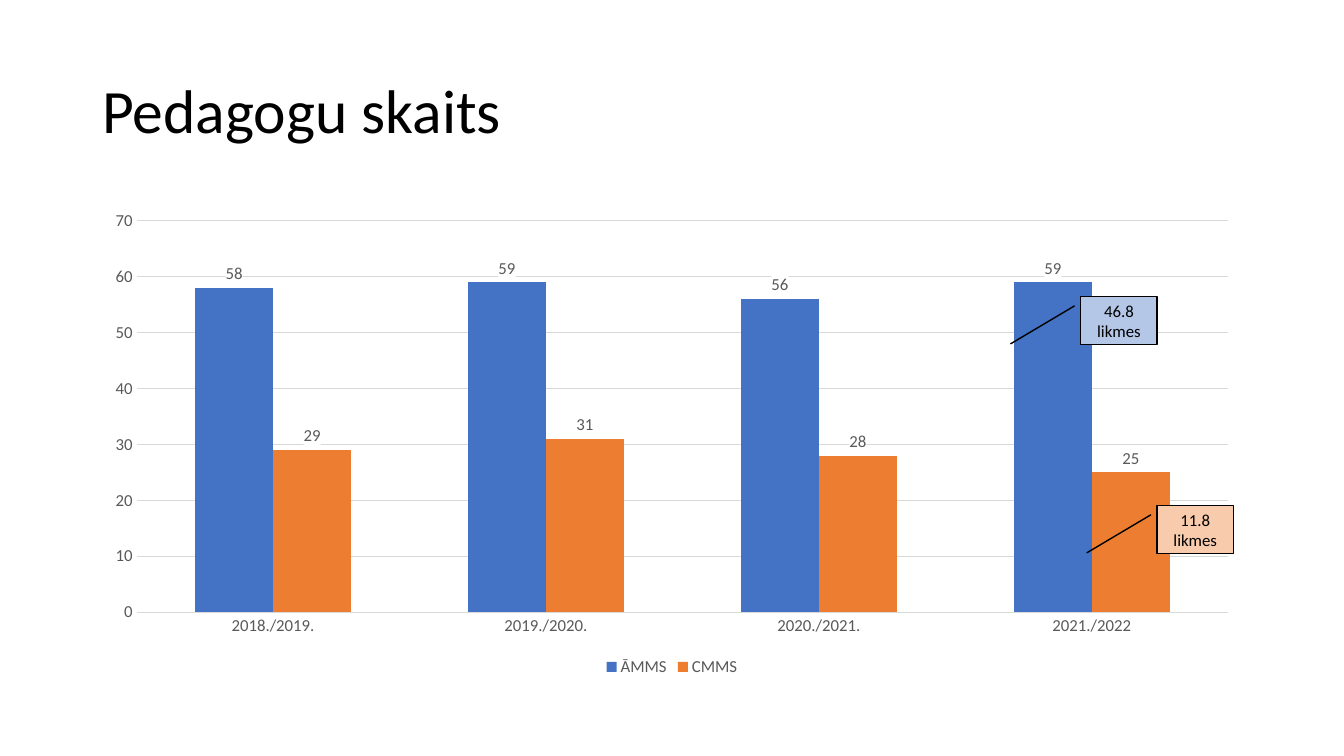
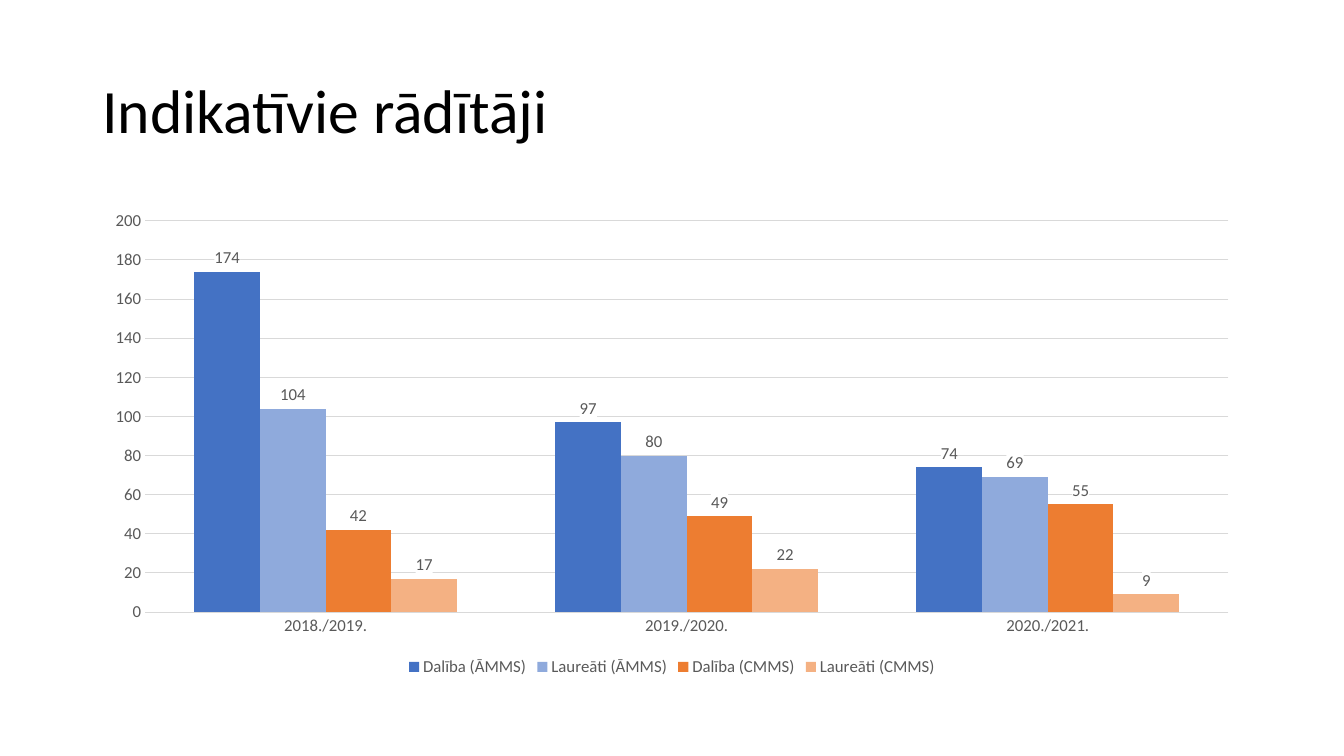
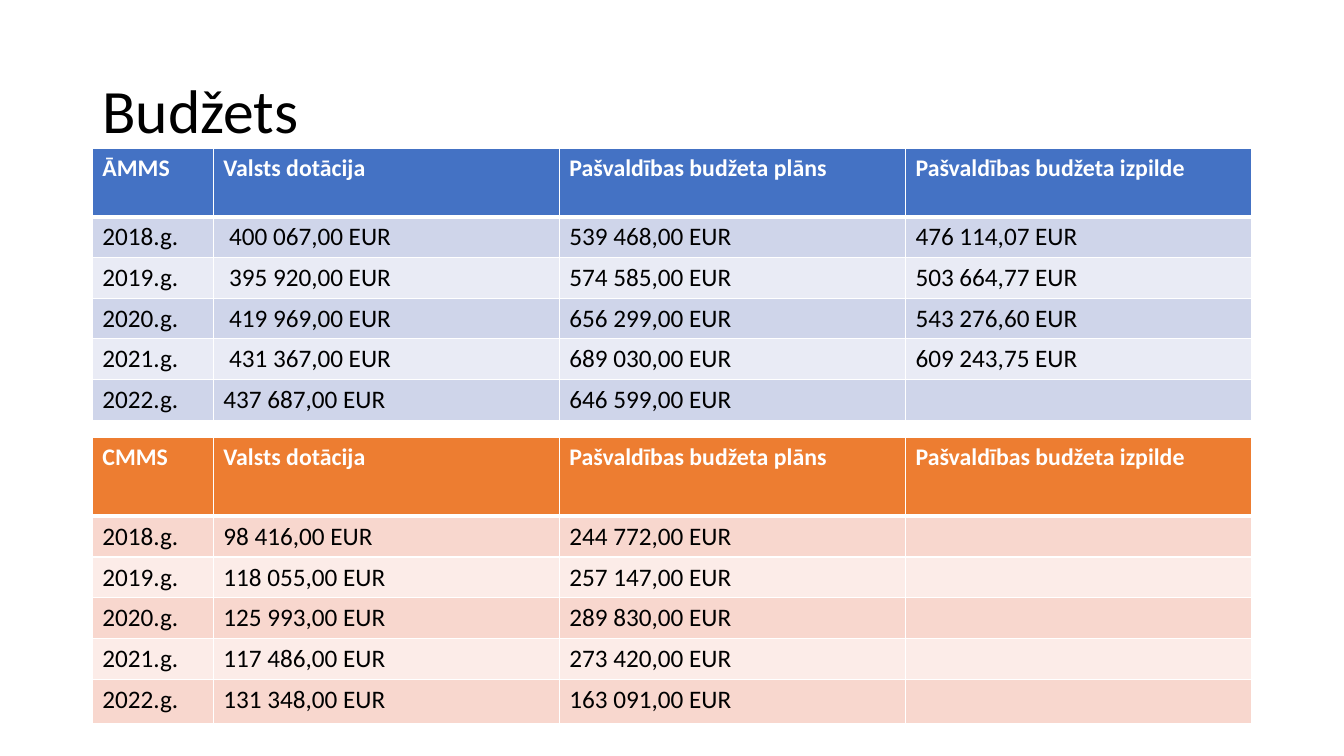
import pptx
import pptx.chart.data
import pptx.dml.color
import pptx.enum.chart
import pptx.enum.shapes
import pptx.enum.text
import pptx.oxml
import pptx.oxml.ns
import pptx.util

Pt = pptx.util.Pt
RGB = pptx.dml.color.RGBColor
ALIGN = pptx.enum.text.PP_ALIGN
ANCHOR = pptx.enum.text.MSO_ANCHOR

# Shared style
FONT = "Calibri"
BLACK = RGB(0x00, 0x00, 0x00)
WHITE = RGB(0xFF, 0xFF, 0xFF)
GREY = RGB(0x59, 0x59, 0x59)
GRID = RGB(0xD9, 0xD9, 0xD9)
BLUE = RGB(0x44, 0x72, 0xC4)
BLUE_MID = RGB(0x8F, 0xAA, 0xDC)
BLUE_PALE = RGB(0xB4, 0xC7, 0xE7)
BLUE_BANDS = (RGB(0xCF, 0xD5, 0xEA), RGB(0xE9, 0xEB, 0xF5))
ORANGE = RGB(0xED, 0x7D, 0x31)
ORANGE_MID = RGB(0xF4, 0xB1, 0x83)
ORANGE_PALE = RGB(0xF8, 0xCB, 0xAD)
ORANGE_BANDS = (RGB(0xF8, 0xD7, 0xCE), RGB(0xFC, 0xEC, 0xE8))
LEFT, WIDTH = 66, 828
CHART_TOP, CHART_HEIGHT = 143.75, 342.6

# Content
YEARS = ["2018./2019.", "2019./2020.", "2020./2021."]
TEACHERS = {
    "categories": YEARS + ["2021./2022"],
    "series": [("ĀMMS", (58, 59, 56, 59), BLUE),
               ("CMMS", (29, 31, 28, 25), ORANGE)],
    "top": 70, "step": 10,
}
CALLOUTS = [  # text, left, top, fill
    ("46.8 likmes", 772, 212, BLUE_PALE),
    ("11.8 likmes", 826.5, 361.25, ORANGE_PALE),
]
INDICATORS = {
    "categories": YEARS,
    "series": [("Dalība (ĀMMS)", (174, 97, 74), BLUE),
               ("Laureāti (ĀMMS)", (104, 80, 69), BLUE_MID),
               ("Dalība (CMMS)", (42, 49, 55), ORANGE),
               ("Laureāti (CMMS)", (17, 22, 9), ORANGE_MID)],
    "top": 200, "step": 20,
}
BUDGET_HEADS = ["Valsts dotācija", "Pašvaldības budžeta plāns",
                "Pašvaldības budžeta izpilde"]
BUDGET_COLS = (86.4, 247.2, 247.2, 247.2)
BUDGETS = [
    {"school": "ĀMMS", "top": 106.2, "head": BLUE, "bands": BLUE_BANDS,
     "heights": [48.6] + [29.1] * 5,
     "rows": [("2018.g.", " 400 067,00 EUR", "539 468,00 EUR", "476 114,07 EUR"),
              ("2019.g.", " 395 920,00 EUR", "574 585,00 EUR", "503 664,77 EUR"),
              ("2020.g.", " 419 969,00 EUR", "656 299,00 EUR", "543 276,60 EUR"),
              ("2021.g.", " 431 367,00 EUR", "689 030,00 EUR", "609 243,75 EUR"),
              ("2022.g.", "437 687,00 EUR", "646 599,00 EUR", "")]},
    {"school": "CMMS", "top": 312.6, "head": ORANGE, "bands": ORANGE_BANDS,
     "heights": [56.2] + [29.1] * 4 + [32],
     "rows": [("2018.g.", "98 416,00 EUR", "244 772,00 EUR", ""),
              ("2019.g.", "118 055,00 EUR", "257 147,00 EUR", ""),
              ("2020.g.", "125 993,00 EUR", "289 830,00 EUR", ""),
              ("2021.g.", "117 486,00 EUR", "273 420,00 EUR", ""),
              ("2022.g.", "131 348,00 EUR", "163 091,00 EUR", "")]},
]


def style_font(font, size, color, bold=False):
    font.name, font.size, font.bold = FONT, Pt(size), bold
    font.color.rgb = color


def write(tf, text, size=18, color=BLACK, bold=False, align=ALIGN.LEFT, spacing=None):
    p = tf.paragraphs[0]
    p.alignment = align
    p.line_spacing = spacing
    r = p.add_run()
    r.text = text
    style_font(r.font, size, color, bold)


def add_slide(prs, title):
    s = prs.slides.add_slide(prs.slide_layouts[6])
    tf = s.shapes.add_textbox(Pt(LEFT), Pt(28.75), Pt(WIDTH), Pt(104.4)).text_frame
    tf.word_wrap = True
    tf.vertical_anchor = ANCHOR.MIDDLE
    write(tf, title, size=44, spacing=0.9)
    return s


def add_column_chart(s, content):
    data = pptx.chart.data.CategoryChartData()
    data.categories = content["categories"]
    for name, values, _ in content["series"]:
        data.add_series(name, values)
    chart = s.shapes.add_chart(
        pptx.enum.chart.XL_CHART_TYPE.COLUMN_CLUSTERED, Pt(LEFT), Pt(CHART_TOP),
        Pt(WIDTH), Pt(CHART_HEIGHT), data).chart
    style_font(chart.font, 12, GREY)
    chart.has_title = False
    chart.has_legend = True
    chart.legend.position = pptx.enum.chart.XL_LEGEND_POSITION.BOTTOM
    chart.legend.include_in_layout = False
    style_font(chart.legend.font, 12, GREY)

    # Axes
    for axis in (chart.category_axis, chart.value_axis):
        axis.major_tick_mark = pptx.enum.chart.XL_TICK_MARK.NONE
        axis.format.line.fill.background()
        style_font(axis.tick_labels.font, 12, GREY)
    axis = chart.value_axis
    axis.minimum_scale, axis.maximum_scale = 0, content["top"]
    axis.major_unit = content["step"]
    axis.major_gridlines.format.line.color.rgb = GRID
    axis.major_gridlines.format.line.width = Pt(0.75)

    # Columns and their labels
    plot = chart.plots[0]
    plot.gap_width, plot.overlap = 150, 0
    plot.vary_by_categories = False
    for series, (_, _, color) in zip(plot.series, content["series"]):
        series.format.fill.solid()
        series.format.fill.fore_color.rgb = color
        labels = series.data_labels
        labels.show_value = True
        labels.position = pptx.enum.chart.XL_LABEL_POSITION.OUTSIDE_END
        style_font(labels.font, 12, GREY)
        # White backing keeps labels clear of the gridlines
        backing = pptx.oxml.parse_xml(
            f'<c:spPr {pptx.oxml.ns.nsdecls("c", "a")}><a:solidFill>'
            f'<a:srgbClr val="{WHITE}"/></a:solidFill></c:spPr>')
        labels._element.find(pptx.oxml.ns.qn("c:txPr")).addprevious(backing)


def add_callout(s, text, left, top, fill):
    sp = s.shapes.add_shape(pptx.enum.shapes.MSO_SHAPE.LINE_CALLOUT_1,
                            Pt(left), Pt(top), Pt(54.6), Pt(34))
    for i, value in enumerate((0.19, -0.08, 0.99, -0.92)):
        sp.adjustments[i] = value
    sp.shadow.inherit = False
    sp.fill.solid()
    sp.fill.fore_color.rgb = fill
    sp.line.color.rgb = BLACK
    sp.line.width = Pt(1)
    sp.text_frame.word_wrap = True
    sp.text_frame.vertical_anchor = ANCHOR.MIDDLE
    write(sp.text_frame, text, size=12, align=ALIGN.CENTER)


def set_borders(cell, top, bottom):
    tcPr = cell._tc.get_or_add_tcPr()
    for i, (side, width) in enumerate((("L", 1), ("R", 1), ("T", top), ("B", bottom))):
        tcPr.insert(i, pptx.oxml.parse_xml(
            f'<a:ln{side} {pptx.oxml.ns.nsdecls("a")} w="{Pt(width)}"><a:solidFill>'
            f'<a:srgbClr val="{WHITE}"/></a:solidFill></a:ln{side}>'))


def add_budget(s, budget):
    rows = [[budget["school"]] + BUDGET_HEADS] + budget["rows"]
    heights = budget["heights"]
    table = s.shapes.add_table(len(rows), len(BUDGET_COLS), Pt(LEFT), Pt(budget["top"]),
                               Pt(WIDTH), Pt(sum(heights))).table
    table.horz_banding = False
    for column, width in zip(table.columns, BUDGET_COLS):
        column.width = Pt(width)
    for i, texts in enumerate(rows):
        table.rows[i].height = Pt(heights[i])
        head = i == 0
        for j, text in enumerate(texts):
            cell = table.cell(i, j)
            cell.fill.solid()
            cell.fill.fore_color.rgb = budget["head"] if head else budget["bands"][(i - 1) % 2]
            set_borders(cell, top=3 if i == 1 else 1, bottom=3 if head else 1)
            if text:
                write(cell.text_frame, text, size=17 if head else 18,
                      color=WHITE if head else BLACK, bold=head)


def main():
    prs = pptx.Presentation()
    prs.slide_width, prs.slide_height = Pt(960), Pt(540)

    # Teachers
    s = add_slide(prs, "Pedagogu skaits")
    add_column_chart(s, TEACHERS)
    for callout in CALLOUTS:
        add_callout(s, *callout)

    # Indicators
    s = add_slide(prs, "Indikatīvie rādītāji")
    add_column_chart(s, INDICATORS)

    # Budget
    s = add_slide(prs, "Budžets")
    for budget in BUDGETS:
        add_budget(s, budget)

    prs.save("out.pptx")


if __name__ == "__main__":
    main()
